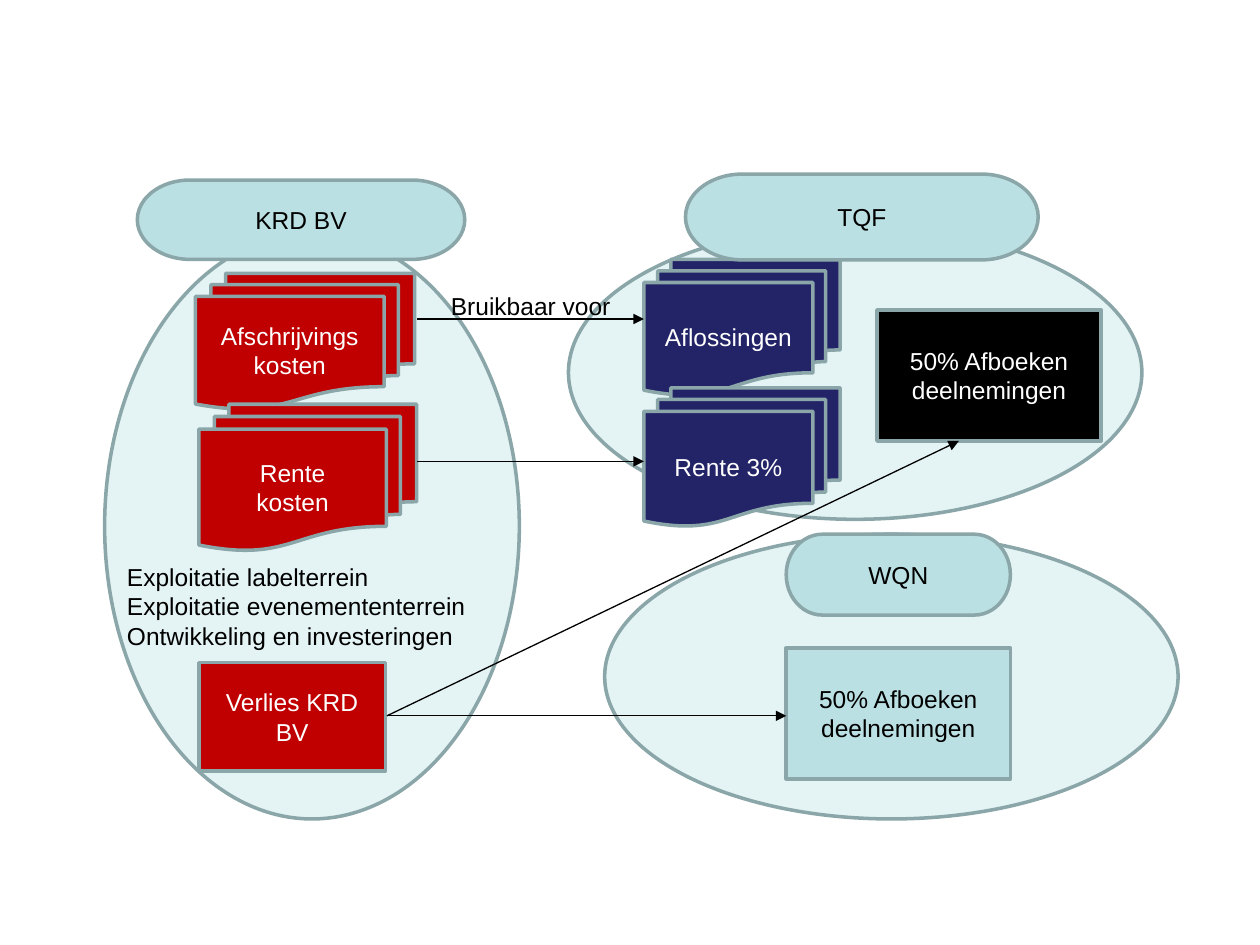
from lxml import etree
from pptx import Presentation
from pptx import util as u
from pptx.dml.color import RGBColor
from pptx.enum import shapes, text
from pptx.oxml import ns

PALE = RGBColor(0xE4, 0xF3, 0xF4)
AQUA = RGBColor(0xBB, 0xE0, 0xE3)
OUTLINE = RGBColor(0x8A, 0xA6, 0xA8)
NAVY = RGBColor(0x23, 0x23, 0x68)
RED = RGBColor(0xC0, 0x00, 0x00)
BLACK = RGBColor(0x00, 0x00, 0x00)
WHITE = RGBColor(0xFF, 0xFF, 0xFF)

ENTITY = shapes.MSO_SHAPE.FLOWCHART_CONNECTOR
COSTS = shapes.MSO_SHAPE.FLOWCHART_MULTIDOCUMENT
TITLE = shapes.MSO_SHAPE.FLOWCHART_TERMINATOR
RESULT = shapes.MSO_SHAPE.FLOWCHART_PROCESS

NODES = [
    (ENTITY, (2.11, 4.7, 8.36, 11.81), PALE, ""),
    (ENTITY, (12.19, 10.77, 11.56, 5.74), PALE, ""),
    (ENTITY, (11.46, 4.55, 11.56, 5.92), PALE, ""),
    (COSTS, (12.98, 5.23, 3.96, 2.74), NAVY, "Aflossingen"),
    (COSTS, (3.94, 5.51, 4.42, 2.74), RED, "Afschrijvings\nkosten"),
    (COSTS, (12.98, 7.82, 3.96, 2.79), NAVY, "Rente 3%"),
    (COSTS, (4.01, 8.15, 4.39, 2.95), RED, "Rente\nkosten"),
    (TITLE, (2.77, 3.63, 6.6, 1.6), AQUA, "KRD BV"),
    (TITLE, (15.85, 10.77, 4.52, 1.63), AQUA, "WQN"),
    (TITLE, (13.82, 3.51, 7.11, 1.73), AQUA, "TQF"),
    (RESULT, (4.01, 13.36, 3.76, 2.18), RED, "Verlies KRD BV"),
    (RESULT, (17.68, 6.25, 4.52, 2.64), BLACK, "50% Afboeken deelnemingen"),
    (RESULT, (15.85, 13.06, 4.52, 2.64), AQUA, "50% Afboeken deelnemingen"),
]
ARROWS = [
    (8.41, 6.43, 12.98, 6.43),
    (8.41, 9.3, 12.98, 9.3),
    (7.8, 14.43, 19.33, 8.89),
    (7.8, 14.43, 15.85, 14.43),
]
LABELS = [
    ((2.31, 11.2, 8.48, 2.06),
     "Exploitatie labelterrein\nExploitatie evenemententerrein\nOntwikkeling en investeringen"),
    ((8.84, 5.74, 4.39, 1.45), "Bruikbaar voor"),
]


def to_cm(lengths):
    return [u.Cm(length) for length in lengths]


def write(box, wording, color, align):
    frame = box.text_frame
    frame.word_wrap = True
    frame.text = wording
    for para in frame.paragraphs:
        para.alignment = align
        for span in para.runs:
            span.font.name = "Arial"
            span.font.size = u.Pt(14)
            span.font.color.rgb = color


def add_node(page, kind, place, fill, wording):
    node = page.shapes.add_shape(kind, *to_cm(place))
    node.shadow.inherit = False
    node.fill.solid()
    node.fill.fore_color.rgb = fill
    node.line.color.rgb = OUTLINE
    node.line.width = u.Pt(2)
    if wording:
        node.text_frame.vertical_anchor = text.MSO_ANCHOR.MIDDLE
        color = BLACK if fill == AQUA else WHITE
        write(node, wording, color, text.PP_ALIGN.CENTER)


def add_arrow(page, ends):
    arrow = page.shapes.add_connector(shapes.MSO_CONNECTOR.STRAIGHT, *to_cm(ends))
    arrow.line.color.rgb = BLACK
    arrow.line.width = u.Pt(0.75)
    etree.SubElement(arrow.line._get_or_add_ln(), ns.qn("a:tailEnd"), type="triangle")
    etree.SubElement(arrow._element.spPr, ns.qn("a:effectLst"))


def add_label(page, place, wording):
    label = page.shapes.add_textbox(*to_cm(place))
    write(label, wording, BLACK, text.PP_ALIGN.LEFT)


def main():
    deck = Presentation()
    deck.slide_width, deck.slide_height = to_cm((25.4, 19.05))
    page = deck.slides.add_slide(deck.slide_layouts[6])
    for node in NODES:
        add_node(page, *node)
    for ends in ARROWS:
        add_arrow(page, ends)
    for label in LABELS:
        add_label(page, *label)
    deck.save("out.pptx")


if __name__ == "__main__":
    main()
